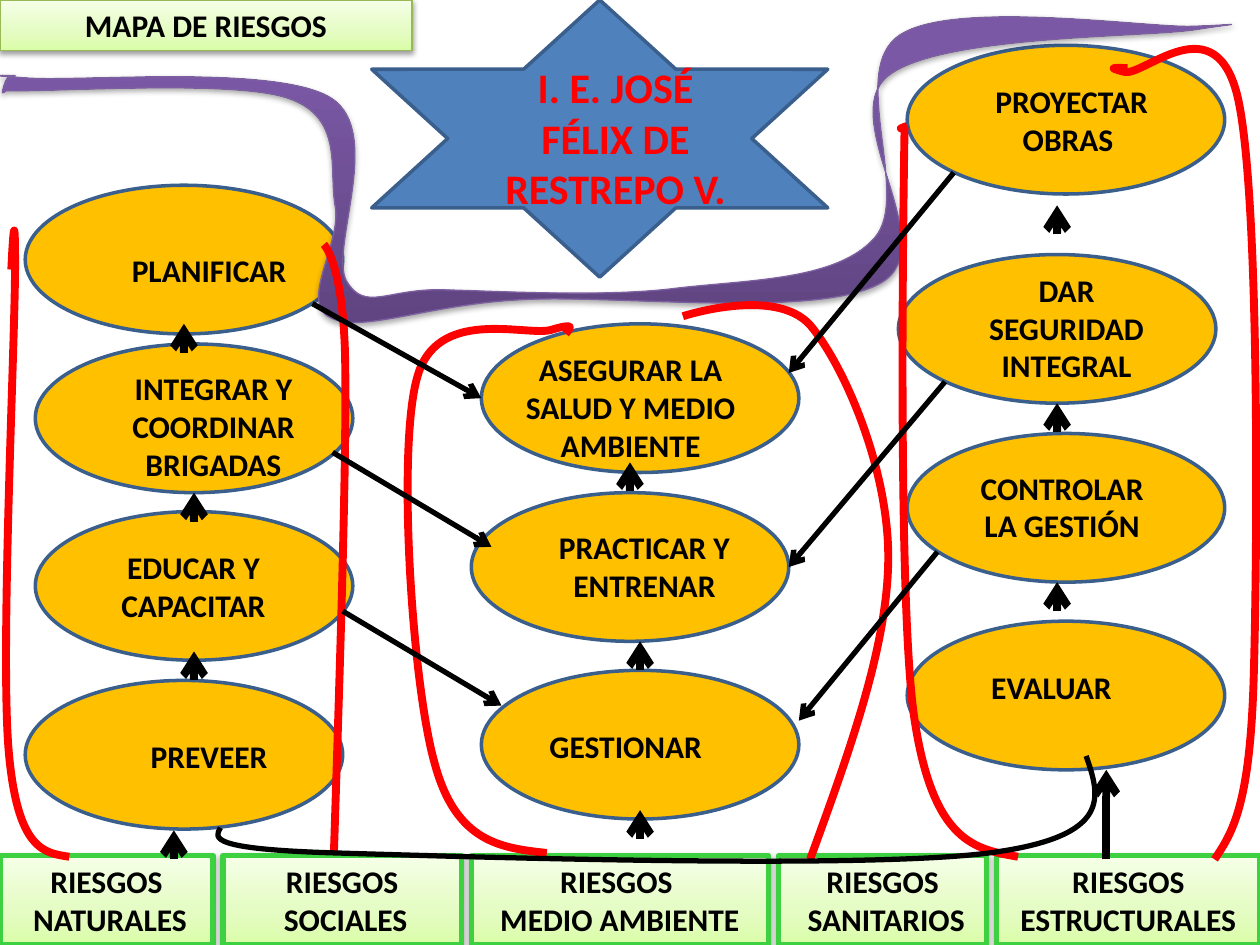
from dataclasses import dataclass

from lxml.etree import SubElement
from pptx import Presentation
from pptx.dml.color import RGBColor
from pptx.enum.shapes import MSO_CONNECTOR, MSO_SHAPE
from pptx.enum.text import MSO_ANCHOR, MSO_AUTO_SIZE, PP_ALIGN
from pptx.oxml import parse_xml
from pptx.oxml.ns import nsdecls, qn
from pptx.util import Inches, Pt


@dataclass(frozen=True)
class Theme:
    """Hold the colours, gradients and type sizes of the slide."""
    font: str = "Calibri"
    body_size: float = 18
    star_size: float = 24
    ink: str = "000000"
    red: str = "FF0000"
    star: str = "4F81BD"
    outline: str = "3A5F8C"
    step: str = "FFC000"
    title_line: str = "98B955"
    risk_line: str = "3DD141"
    ribbon_line: str = "7D60A0"
    green: tuple = ((0, "DAFDA7"), (35, "E4FCC2"), (100, "F5FFE7"))
    purple: tuple = ((0, "5F4480"), (80, "7B58A6"), (100, "7C57A8"))


@dataclass(frozen=True)
class Box:
    """Describe a region in inches."""
    left: float
    top: float
    width: float
    height: float

    def inside(self, left, top, width, height):
        """Return a box placed relative to this one."""
        return Box(self.left + left, self.top + top, width, height)

    def point(self, x, y):
        """Return the position of a point relative to this box."""
        return Inches(self.left + x), Inches(self.top + y)

    def lengths(self):
        """Return left, top, width and height as lengths."""
        return [Inches(value) for value in (self.left, self.top, self.width, self.height)]


THEME = Theme()
STEP_WIDTH, STEP_HEIGHT = 2.52, 1.18
ARROW_LENGTH = 0.23

LEFT_STEPS = [
    (0, 0, "PLANIFICAR", 0.71, 0.47, 1.5, 1),
    (0.08, 1.26, "INTEGRAR Y COORDINAR BRIGADAS", 0.63, 0.15, 1.57, 3),
    (0.08, 2.59, "EDUCAR Y CAPACITAR", 0.23, 0.24, 2.05, 2),
    (0, 3.93, "PREVEER", 0.71, 0.4, 1.5, 1),
]
MIDDLE_STEPS = [
    (0.08, 0, "ASEGURAR LA SALUD Y MEDIO AMBIENTE", 0.24, 0.16, 1.89, 3),
    (0, 1.34, "PRACTICAR Y ENTRENAR", 0.47, 0.23, 1.81, 2),
    (0.08, 2.75, "GESTIONAR ", 0.39, 0.4, 1.57, 1),
]
RIGHT_STEPS = [
    (0.07, 0, "PROYECTAR OBRAS ", 0.4, 0.24, 1.81, 2),
    (0, 1.66, "DAR SEGURIDAD INTEGRAL", 0.55, 0.08, 1.57, 3),
    (0.07, 3.08, "CONTROLAR LA GESTIÓN", 0.48, 0.23, 1.5, 2),
    (0.07, 4.57, "EVALUAR", 0.24, 0.32, 1.81, 1),
]
RISKS = [
    (0, 1.69, ["RIESGOS", " NATURALES"]),
    (1.77, 1.89, ["RIESGOS", " SOCIALES"]),
    (3.74, 2.36, ["RIESGOS ", "MEDIO AMBIENTE"]),
    (6.18, 1.65, ["RIESGOS", " SANITARIOS"]),
    (7.91, 2.09, ["RIESGOS ESTRUCTURALES"]),
]
RIBBON = [
    (9.43, 0.21), (9.03, 0.21, 7.55, 0, 7.14, 0.28), (6.72, 0.56, 7.24, 1.56, 6.94, 1.89),
    (6.64, 2.23, 5.93, 2.22, 5.35, 2.29), (4.78, 2.36, 3.94, 2.31, 3.51, 2.3),
    (3.07, 2.29, 2.9, 2.48, 2.75, 2.23), (2.61, 1.98, 3.05, 1.05, 2.63, 0.78),
    (2.21, 0.51, 0.64, 0.65, 0.22, 0.62), (-0.21, 0.59, 0.1, 0.6, 0.08, 0.6),
    (0.05, 0.6, 0.07, 0.62, 0.08, 0.62), (0.08, 0.62, 0.13, 0.6, 0.12, 0.6),
    (0.12, 0.6, 0.08, 0.59, 0.06, 0.62), (0.04, 0.64, 0.02, 0.72, 0.02, 0.73),
    (0.01, 0.75, 0.05, 0.72, 0.05, 0.72), (0.43, 0.73, 1.86, 0.63, 2.29, 0.78),
    (2.73, 0.93, 2.61, 1.34, 2.66, 1.63), (2.72, 1.92, 2.37, 2.4, 2.62, 2.52),
    (2.86, 2.65, 3.38, 2.42, 4.11, 2.38), (4.84, 2.33, 6.51, 2.54, 7, 2.24),
    (7.49, 1.95, 6.63, 0.94, 7.05, 0.6), (7.47, 0.27, 9.13, 0.3, 9.52, 0.23),
    (9.92, 0.17, 9.83, 0.2, 9.43, 0.21),
]
RED_CURVES = [
    [(0.55, 6.8), (0.35, 6.77, 0.14, 6.75, 0.07, 5.97), (0, 5.18, 0.12, 2.74, 0.12, 2.1),
     (0.12, 1.47, 0.09, 2.14, 0.09, 2.14)],
    [(2.65, 6.77), (2.7, 5.23, 2.75, 3.7, 2.74, 2.89), (2.73, 2.09, 2.57, 1.94, 2.57, 1.94)],
    [(4.34, 6.77), (3.98, 6.73, 3.62, 6.69, 3.45, 6.06), (3.27, 5.43, 3.15, 3.57, 3.31, 3),
     (3.46, 2.43, 4.17, 2.67, 4.37, 2.62), (4.57, 2.56, 4.53, 2.6, 4.49, 2.65)],
    [(6.43, 6.82), (6.74, 5.97, 7.05, 5.12, 7.05, 4.42), (7.05, 3.71, 6.7, 2.9, 6.43, 2.58),
     (6.15, 2.27, 5.42, 2.51, 5.42, 2.51)],
    [(8.08, 6.8), (7.74, 6.74, 7.41, 6.69, 7.26, 5.72), (7.11, 4.76, 7.18, 1.02, 7.18, 1.02),
     (7.18, 1.02, 7.15, 1.02, 7.15, 1.02), (7.16, 1.01, 7.18, 1.01, 7.2, 1)],
    [(9.64, 6.82), (9.78, 6.61, 9.92, 6.4, 9.95, 5.39), (9.98, 4.39, 10, 1.61, 9.83, 0.8),
     (9.66, 0, 9.07, 0.62, 8.92, 0.57), (8.77, 0.53, 8.86, 0.54, 8.95, 0.54)],
]
BLACK_CURVE = [(1.75, 6.57), (1.7, 6.65, 1.65, 6.74, 2.66, 6.77),
               (3.68, 6.8, 6.85, 6.9, 7.85, 6.77), (8.84, 6.64, 8.73, 6.32, 8.62, 6)]
UP_ARROWS = [(1.38, 6.82), (1.54, 5.4), (1.54, 4.14), (1.46, 2.8), (5.08, 6.66),
             (5.08, 5.32), (5, 3.9), (8.39, 4.85), (8.39, 3.43), (8.39, 1.86)]
CROSS_ARROWS = [
    (2.48, 2.41, 3.82, 3.16), (2.64, 3.59, 3.9, 4.34), (2.72, 4.85, 3.98, 5.6),
    (7.57, 1.37, 6.26, 2.96), (7.5, 3.03, 6.26, 4.5), (7.44, 4.38, 6.34, 5.72),
]


def style_line(line, color, width):
    """Set the colour and width of a line."""
    line.color.rgb = RGBColor.from_string(color)
    line.width = Pt(width)


def style_plain(shape, fill, line, width):
    """Give a shape a solid or empty fill, a line and no shadow."""
    shape.shadow.inherit = False
    if fill:
        shape.fill.solid()
        shape.fill.fore_color.rgb = RGBColor.from_string(fill)
    else:
        shape.fill.background()
    style_line(shape.line, line, width)


def style_raised(shape, stops, line, width, distance, opacity):
    """Give a shape an upward gradient, a line and a soft shadow."""
    style_plain(shape, None, line, width)
    properties = shape.element.spPr
    stop_xml = "".join(f'<a:gs pos="{position * 1000}"><a:srgbClr val="{color}"/></a:gs>'
                       for position, color in stops)
    gradient = parse_xml(f'<a:gradFill {nsdecls("a")} rotWithShape="1"><a:gsLst>{stop_xml}</a:gsLst>'
                         '<a:lin ang="16200000" scaled="0"/></a:gradFill>')
    properties.replace(properties.find(qn("a:noFill")), gradient)
    properties.find(qn("a:effectLst")).append(parse_xml(
        f'<a:outerShdw {nsdecls("a")} blurRad="{Pt(3.1)}" dist="{Pt(distance)}" dir="5400000" '
        f'rotWithShape="0"><a:srgbClr val="000000"><a:alpha val="{opacity * 1000}"/></a:srgbClr>'
        '</a:outerShdw>'))


def write_text(shape, lines, size=THEME.body_size, color=THEME.ink):
    """Write centred bold paragraphs from the top of a shape."""
    frame = shape.text_frame
    frame.word_wrap = True
    frame.auto_size = MSO_AUTO_SIZE.NONE
    frame.vertical_anchor = MSO_ANCHOR.TOP
    for index, line in enumerate(lines):
        paragraph = frame.add_paragraph() if index else frame.paragraphs[0]
        paragraph.alignment = PP_ALIGN.CENTER
        run = paragraph.add_run()
        run.text = line
        run.font.name, run.font.size, run.font.bold = THEME.font, Pt(size), True
        run.font.color.rgb = RGBColor.from_string(color)


def place_title(title, box):
    """Place the title band in its box."""
    title.left, title.top, title.width, title.height = box.lengths()
    style_raised(title, THEME.green, THEME.title_line, 0.75, 1.6, 38)
    write_text(title, ["MAPA DE RIESGOS"])


def add_school_star(shapes, box):
    """Draw the star with the name of the school."""
    star = shapes.add_shape(MSO_SHAPE.STAR_6_POINT, *box.lengths())
    style_plain(star, THEME.star, THEME.outline, 2)
    label = shapes.add_textbox(*box.inside(0.87, 0.44, 2.13, 1.31).lengths())
    write_text(label, ["I. E. JOSÉ FÉLIX DE RESTREPO V."], THEME.star_size, THEME.red)


def add_step_column(shapes, box, steps):
    """Draw a column of labelled ellipses."""
    for left, top, text, label_left, label_top, label_width, line_count in steps:
        step_box = box.inside(left, top, STEP_WIDTH, STEP_HEIGHT)
        ellipse = shapes.add_shape(MSO_SHAPE.OVAL, *step_box.lengths())
        style_plain(ellipse, THEME.step, THEME.outline, 2)
        label_box = step_box.inside(label_left, label_top, label_width, 0.1 + 0.3 * line_count)
        write_text(shapes.add_textbox(*label_box.lengths()), [text])


def add_risk_row(shapes, box):
    """Draw the row of risk boxes."""
    for left, width, lines in RISKS:
        risk = shapes.add_shape(MSO_SHAPE.RECTANGLE, *box.inside(left, 0, width, box.height).lengths())
        style_raised(risk, THEME.green, THEME.risk_line, 3, 1.6, 38)
        write_text(risk, lines)


def add_curve(shapes, box, curve, close=False):
    """Build an outline through a chain of cubic curves."""
    start, *segments = curve
    points = [box.point(*segment[index:index + 2]) for segment in segments for index in (0, 2, 4)]
    builder = shapes.build_freeform(*box.point(*start))
    builder.add_line_segments(points, close=close)
    shape = builder.convert_to_shape()
    outline = next(shape.element.spPr.iter(qn("a:path")))
    lines = outline.findall(qn("a:lnTo"))
    for index in range(0, len(lines), 3):
        cubic = outline.makeelement(qn("a:cubicBezTo"))
        lines[index].addprevious(cubic)
        for line in lines[index:index + 3]:
            cubic.append(line[0])
            outline.remove(line)
    return shape


def add_arrow(shapes, box, start, end, width):
    """Draw a black arrow between two points."""
    arrow = shapes.add_connector(MSO_CONNECTOR.STRAIGHT, *box.point(*start), *box.point(*end))
    style_line(arrow.line, THEME.ink, width)
    SubElement(arrow.element.spPr.find(qn("a:ln")), qn("a:tailEnd"), type="arrow")
    SubElement(arrow.element.spPr, qn("a:effectLst"))


def add_links(shapes, box):
    """Draw the ribbon, the loops and the arrows over the map."""
    style_raised(add_curve(shapes, box, RIBBON, True), THEME.purple, THEME.ribbon_line, 0.75, 1.8, 35)
    for curve in RED_CURVES:
        style_plain(add_curve(shapes, box, curve), None, THEME.red, 4.5)
    for x, y in UP_ARROWS:
        add_arrow(shapes, box, (x, y), (x, y - ARROW_LENGTH), 4.5)
    add_arrow(shapes, box, (8.78, 6.82), (8.78, 6.11), 4.5)
    for arrow in CROSS_ARROWS:
        add_arrow(shapes, box, arrow[:2], arrow[2:], 3)
    style_plain(add_curve(shapes, box, BLACK_CURVE), None, THEME.ink, 3)


def main():
    """Build the risk map and save it."""
    presentation = Presentation()
    presentation.slide_width, presentation.slide_height = Inches(10), Inches(7.5)
    slide = presentation.slides.add_slide(presentation.slide_layouts[5])
    shapes = slide.shapes
    place_title(shapes.title, Box(0, 0, 3.27, 0.4))
    add_school_star(shapes, Box(2.95, 0, 3.62, 2.2))
    add_step_column(shapes, Box(0.2, 1.47, 2.6, 5.11), LEFT_STEPS)
    add_step_column(shapes, Box(3.74, 2.57, 2.6, 3.93), MIDDLE_STEPS)
    add_step_column(shapes, Box(7.13, 0.36, 2.59, 5.75), RIGHT_STEPS)
    add_risk_row(shapes, Box(0, 6.79, 10, 0.71))
    add_links(shapes, Box(0, 0, 10, 7.5))
    presentation.save("out.pptx")


if __name__ == "__main__":
    main()
